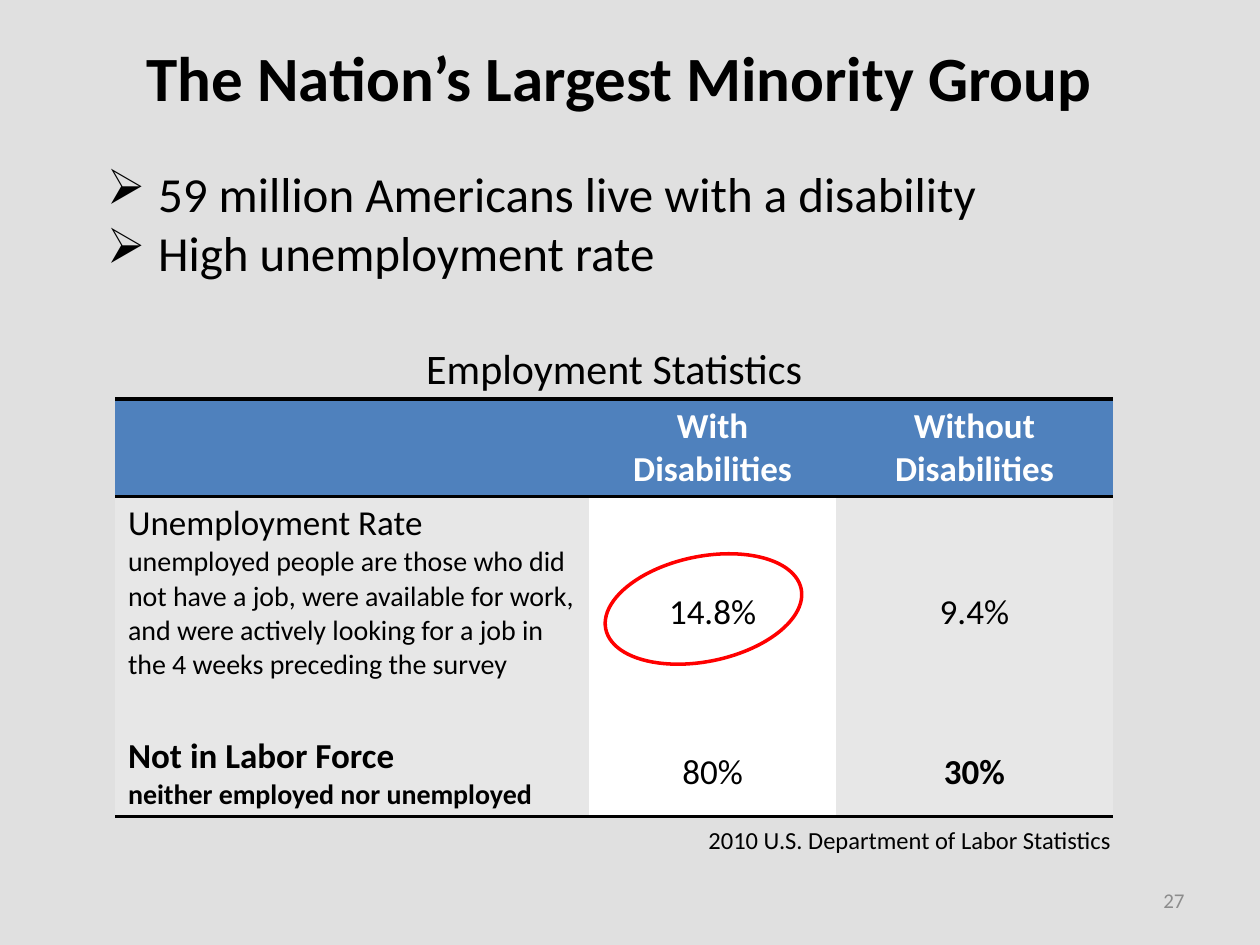
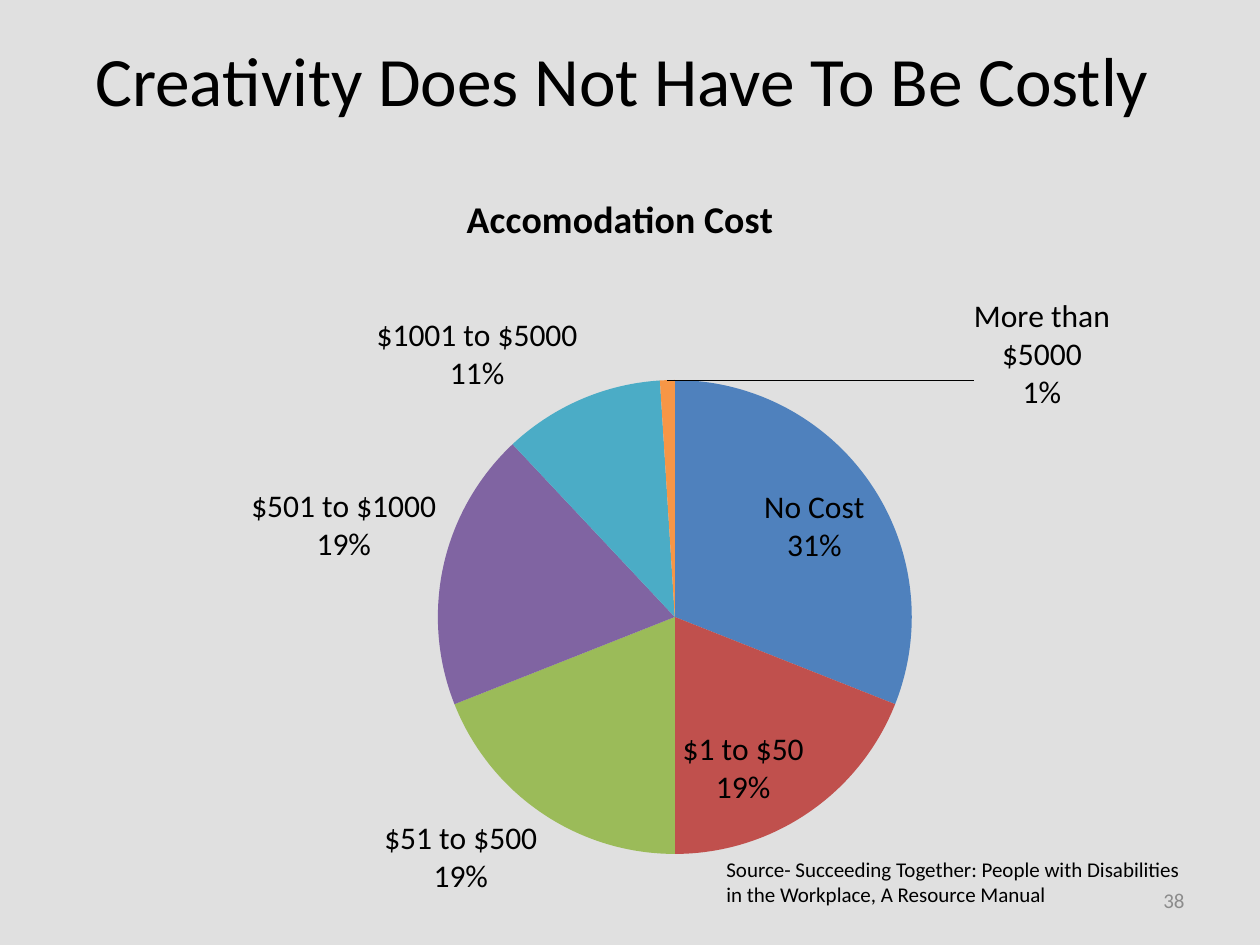
from lxml import etree
from pptx import Presentation
from pptx.chart.data import CategoryChartData
from pptx.dml.color import RGBColor
from pptx.enum.chart import XL_CHART_TYPE, XL_LABEL_POSITION
from pptx.enum.shapes import MSO_SHAPE
from pptx.enum.text import MSO_ANCHOR, PP_ALIGN
from pptx.oxml.ns import qn
from pptx.util import Pt

PX = 9525  # EMU in one px, 96 px to the inch
LEFT, CENTER, RIGHT = PP_ALIGN.LEFT, PP_ALIGN.CENTER, PP_ALIGN.RIGHT
TOP, MIDDLE = MSO_ANCHOR.TOP, MSO_ANCHOR.MIDDLE
ELLIPSE = MSO_SHAPE.OVAL
PIE = XL_CHART_TYPE.PIE
INSIDE, OUTSIDE = XL_LABEL_POSITION.INSIDE_END, XL_LABEL_POSITION.OUTSIDE_END
TITLE_ONLY = 5
NO_TABLE_STYLE = "{2D5ABB26-0587-4C30-8999-92F81FD0307C}"

FONT = "Calibri"
BLACK, WHITE, GRAY, RED = "000000", "FFFFFF", "8C8C8C", "FF0000"
BACKGROUND, HEADER_BLUE, CELL_GRAY = "E0E0E0", "4F81BD", "E7E7E7"
PIE_COLORS = ["4F81BD", "C0504D", "9BBB59", "8064A2", "4BACC6", "F79646"]


def rgb(color):
    return RGBColor.from_string(color)


def emu(*lengths):
    return [length * PX for length in lengths]


def add_child(parent, tag, **attributes):
    return etree.SubElement(parent, qn(tag), attributes)


def chart_layout(**values):
    """A manual chart layout; values are fractions of the chart's size."""
    layout = etree.Element(qn("c:layout"))
    manual = add_child(layout, "c:manualLayout")
    for name, value in values.items():
        add_child(manual, f"c:{name}", val=str(value))
    return layout


class Deck:
    def __init__(self):
        self.presentation = Presentation()
        self.presentation.slide_width, self.presentation.slide_height = emu(960, 720)
        fill = self.presentation.slide_master.background.fill
        fill.solid()
        fill.fore_color.rgb = rgb(BACKGROUND)
        self.slide = None

    def format_font(self, font, size, color=BLACK, bold=False):
        values = {"name": FONT, "size": Pt(size), "bold": bold}
        for name, value in values.items():
            setattr(font, name, value)
        font.color.rgb = rgb(color)

    def fill_text(self, frame, lines, align=LEFT, color=BLACK, bold=False, bullet=None):
        """Fill a text frame; each line is a (text, size) pair."""
        for index, (text, size) in enumerate(lines):
            paragraph = frame.add_paragraph() if index else frame.paragraphs[0]
            paragraph.alignment = align
            paragraph.add_run().text = text
            if bullet:
                properties = paragraph._p.get_or_add_pPr()
                properties.set("marL", str(39 * PX))
                properties.set("indent", str(-39 * PX))
                add_child(properties, "a:buChar", char=bullet)
            self.format_font(paragraph.runs[0].font, size, color, bold)

    def add_slide(self, title, box, size, number, bold=False):
        layout = self.presentation.slide_layouts[TITLE_ONLY]
        self.slide = self.presentation.slides.add_slide(layout)
        shape = self.slide.shapes.title
        for name, value in zip(("left", "top", "width", "height"), emu(*box)):
            setattr(shape, name, value)
        shape.text_frame.vertical_anchor = MIDDLE
        self.fill_text(shape.text_frame, [(title, size)], CENTER, bold=bold)
        self.add_text((688, 667, 224, 38), [(number, 12)], RIGHT, MIDDLE, color=GRAY)

    def add_text(self, box, lines, align=LEFT, anchor=TOP, **style):
        frame = self.slide.shapes.add_textbox(*emu(*box)).text_frame
        frame.word_wrap = True
        frame.vertical_anchor = anchor
        self.fill_text(frame, lines, align, **style)

    def add_ring(self, box, rotation, color):
        shape = self.slide.shapes.add_shape(ELLIPSE, *emu(*box))
        shape.shadow.inherit = False
        shape.rotation = rotation
        shape.fill.background()
        shape.line.color.rgb = rgb(color)
        shape.line.width = Pt(2)

    def add_rule(self, cell, side, position):
        """Draw a black border on one side of a cell."""
        line = etree.Element(qn(f"a:{side}"), w=str(Pt(2)))
        add_child(add_child(line, "a:solidFill"), "a:srgbClr", val=BLACK)
        cell._tc.get_or_add_tcPr().insert(position, line)

    def add_table(self, box, widths, heights, rows, column_fills):
        """Each row is a list of (lines, bold) cells; the first is the header."""
        table = self.slide.shapes.add_table(len(rows), len(widths), *emu(*box)).table
        table.horz_banding = False
        table._tbl.tblPr.find(qn("a:tableStyleId")).text = NO_TABLE_STYLE
        for column, width in zip(table.columns, widths):
            column.width = width * PX
        for row, height in zip(table.rows, heights):
            row.height = height * PX
        for row_index, row in enumerate(rows):
            header, last = row_index == 0, row_index == len(rows) - 1
            for column_index, (lines, bold) in enumerate(row):
                cell = table.cell(row_index, column_index)
                cell.fill.solid()
                cell.fill.fore_color.rgb = rgb(HEADER_BLUE if header else column_fills[column_index])
                label = column_index == 0
                cell.vertical_anchor = TOP if header or label else MIDDLE
                self.fill_text(cell.text_frame, lines, LEFT if label else CENTER,
                               WHITE if header else BLACK, bold)
                if header:
                    self.add_rule(cell, "lnT", 0)
                if header or last:
                    self.add_rule(cell, "lnB", 1 if header else 0)

    def add_pie(self, box, title, slices, colors, positions, plot_layout, moved_label):
        data = CategoryChartData()
        data.categories = [name for name, _ in slices]
        data.add_series(title, [value for _, value in slices])
        chart = self.slide.shapes.add_chart(PIE, *emu(*box), data).chart
        chart.has_legend = False
        self.format_font(chart.font, 18)

        # Title and plot area
        self.fill_text(chart.chart_title.text_frame, [(title, 21.6)], CENTER, bold=True)
        title_element = chart.chart_title._element
        plot_area = chart._chartSpace.chart.plotArea
        for element in (title_element, plot_area):
            for layout in element.findall(qn("c:layout")):
                element.remove(layout)
        title_element.find(qn("c:tx")).addnext(
            chart_layout(xMode="edge", yMode="edge", x=0.36, y=0.05))
        plot_area.insert(0, plot_layout)

        # Slices and their labels
        plot = chart.plots[0]
        plot.vary_by_categories = True
        series = plot.series[0]
        for index, (color, position) in enumerate(zip(colors, positions)):
            point = series.points[index]
            point.format.fill.solid()
            point.format.fill.fore_color.rgb = rgb(color)
            self.format_font(point.data_label.font, 18)
            point.data_label.position = position

        labels = series.data_labels
        self.format_font(labels.font, 18)
        element = labels._element
        shown = {"showVal": "0", "showCatName": "1", "showPercent": "1"}
        for name, value in shown.items():
            for flag in element.iter(qn(f"c:{name}")):
                flag.set("val", value)
        for flag in list(element.iter(qn("c:showBubbleSize"))):
            separator = etree.Element(qn("c:separator"))
            separator.text = "\n"
            flag.addnext(separator)
        leader = element.find(qn("c:showLeaderLines"))
        if leader is None:
            leader = add_child(element, "c:showLeaderLines")
        leader.set("val", "1")
        last_label = element.findall(qn("c:dLbl"))[-1]
        last_label.find(qn("c:idx")).addnext(moved_label)


def build_minority_slide(deck):
    deck.add_slide("The Nation’s Largest Minority Group", (0, 16, 944, 84), 36, "27", bold=True)
    deck.add_text((48, 624, 808, 64), [("2010 U.S. Department of Labor Statistics", 14)], RIGHT)

    # Employment table
    rows = [
        [([], False), ([("With Disabilities", 20)], True), ([("Without Disabilities", 20)], True)],
        [([("Unemployment Rate", 20),
           ("unemployed people are those who did not have a job, were available for work, "
            "and were actively looking for a job in the 4 weeks preceding the survey", 16)], False),
         ([("14.8%", 20)], False), ([("9.4%", 20)], False)],
        [([("Not in Labor Force", 20), ("neither employed nor unemployed", 16)], True),
         ([("80%", 20)], False), ([("30%", 20)], True)],
    ]
    deck.add_table((88, 304, 760, 318), (361, 188, 211), (74, 177, 67), rows,
                   (CELL_GRAY, WHITE, CELL_GRAY))
    deck.add_text((88, 256, 760, 48), [("Employment Statistics", 24)], CENTER)

    # Key facts and the highlighted rate
    deck.add_text((72, 120, 792, 100),
                  [("59 million Americans live with a disability", 28),
                   ("High unemployment rate", 28)], bullet="➢")
    deck.add_ring((460, 424, 152, 80), 348.4, RED)


def build_cost_slide(deck):
    deck.add_slide("Creativity Does Not Have To Be Costly ", (48, 0, 864, 120), 39.6, "38")

    # Cost pie
    slices = [("No Cost", 31), ("$1 to $50", 19), ("$51 to $500", 19),
              ("$501 to $1000", 19), ("$1001 to $5000", 11), ("More than $5000", 1)]
    plot_layout = chart_layout(layoutTarget="inner", xMode="edge", yMode="edge",
                               x=0.34, y=0.3, w=0.43, h=0.61)
    deck.add_pie((48, 112, 840, 592), "Accomodation Cost", slices, PIE_COLORS,
                 [INSIDE] * 2 + [OUTSIDE] * 4, plot_layout, chart_layout(x=0.34, y=0.05))

    # Source
    deck.add_text((544, 648, 376, 48),
                  [("Source- Succeeding Together: People with Disabilities "
                    "in the Workplace, A Resource Manual", 12)])


def main():
    deck = Deck()
    build_minority_slide(deck)
    build_cost_slide(deck)
    deck.presentation.save("out.pptx")


if __name__ == "__main__":
    main()
